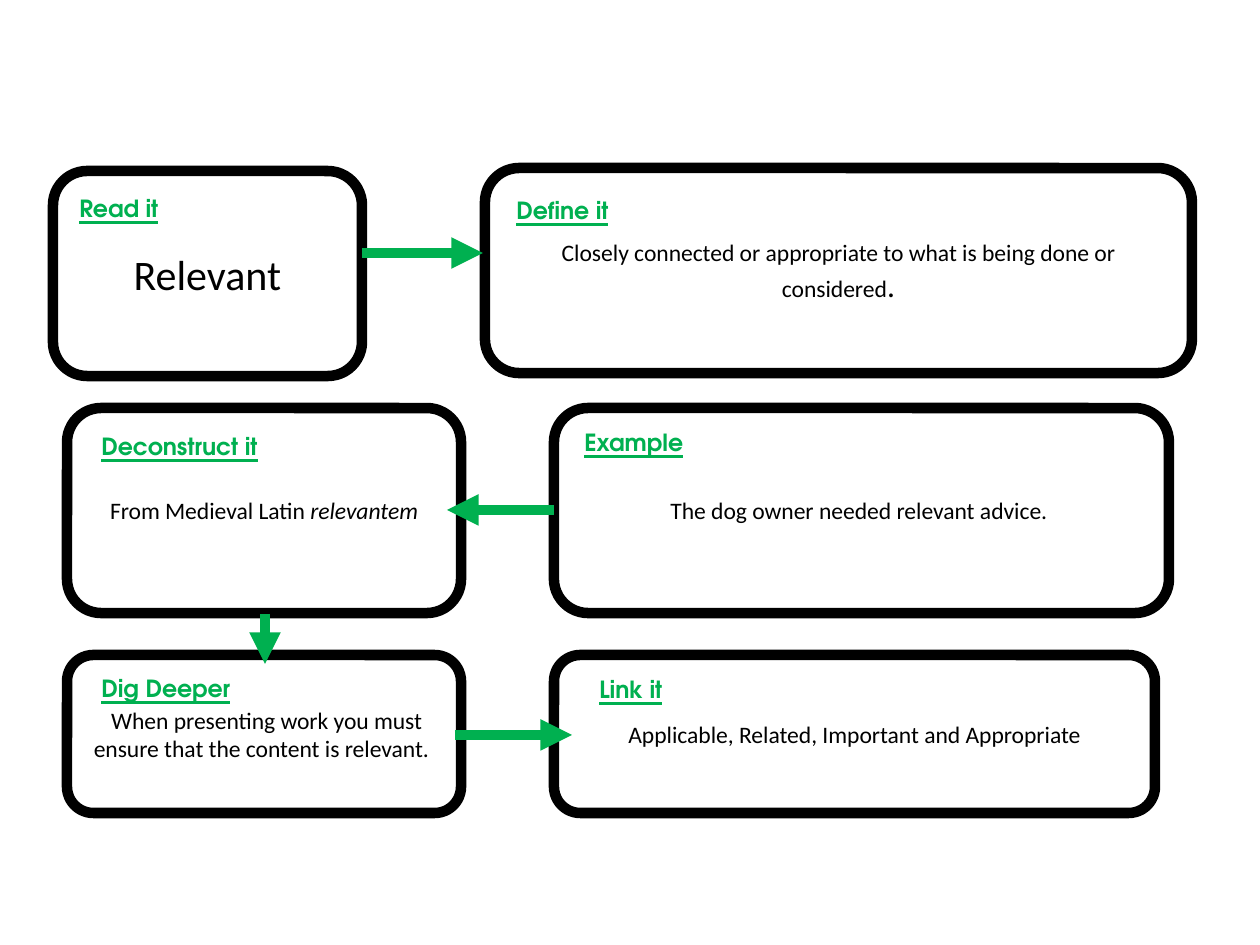
from typing import NamedTuple

from lxml import etree
from pptx import Presentation, util as u
from pptx.dml.color import RGBColor
from pptx.enum import shapes, text
from pptx.oxml import ns

PX = 914400 / 126  # EMU in one px
BLACK = RGBColor(0, 0, 0)
WHITE = RGBColor(255, 255, 255)
GREEN = RGBColor(0x00, 0xB0, 0x50)
BODY, HEAD = "Calibri", "TeX Gyre Adventor"
SIZE, STROKE = 13.5, 6


class Rect(NamedTuple):
    x: int
    y: int
    w: int
    h: int


class Run(NamedTuple):
    words: str
    size: float = SIZE
    slant: bool = False


class Card(NamedTuple):
    title: str
    label: Rect
    box: Rect
    runs: list[Run]


class Arrow(NamedTuple):
    x1: int
    y1: int
    x2: int
    y2: int


CARDS = [
    Card("Read it", Rect(67, 188, 126, 42), Rect(53, 171, 309, 205),
         [Run("Relevant", 24)]),
    Card("Define it", Rect(504, 190, 126, 42), Rect(485, 168, 707, 205),
         [Run("Closely connected or appropriate to what is being done or considered"),
          Run(".", 18)]),
    Card("Deconstruct it", Rect(89, 426, 224, 42), Rect(67, 408, 394, 205),
         [Run("From Medieval Latin "), Run("relevantem", slant=True)]),
    Card("Example", Rect(572, 422, 126, 42), Rect(554, 408, 615, 205),
         [Run("The dog owner needed relevant advice. ")]),
    Card("Dig Deeper", Rect(89, 668, 158, 42), Rect(67, 655, 394, 158),
         [Run(" When presenting work you must ensure that the content is relevant. ")]),
    Card("Link it", Rect(587, 669, 126, 42), Rect(554, 655, 601, 158),
         [Run("Applicable, Related, Important and Appropriate")]),
]

ARROWS = [
    Arrow(554, 510, 447, 510),
    Arrow(362, 253, 483, 253),
    Arrow(455, 735, 572, 735),
    Arrow(265, 614, 265, 664),
]


def emu(*vals: int) -> list[u.Emu]:
    return [u.Emu(round(v * PX)) for v in vals]


def write(para, words: str, *, size: float = SIZE, font: str = BODY,
          color: RGBColor = BLACK, bold: bool = False, slant: bool = False,
          under: bool = False) -> None:
    run = para.add_run()
    run.text = words
    face = run.font
    face.size, face.name, face.color.rgb = u.Pt(size), font, color
    face.bold, face.italic, face.underline = bold, slant, under


def draw_box(slide, card: Card) -> None:
    box = slide.shapes.add_shape(shapes.MSO_SHAPE.ROUNDED_RECTANGLE, *emu(*card.box))
    box.shadow.inherit = False
    box.fill.solid()
    box.fill.fore_color.rgb = WHITE
    box.line.color.rgb = BLACK
    box.line.width = u.Pt(STROKE)
    frame = box.text_frame
    frame.word_wrap = True
    frame.vertical_anchor = text.MSO_ANCHOR.MIDDLE
    para = frame.paragraphs[0]
    para.alignment = text.PP_ALIGN.CENTER
    for run in card.runs:
        write(para, run.words, size=run.size, slant=run.slant)


def draw_arrow(slide, arrow: Arrow) -> None:
    link = slide.shapes.add_connector(shapes.MSO_CONNECTOR.STRAIGHT, *emu(*arrow))
    link.line.color.rgb = GREEN
    link.line.width = u.Pt(STROKE)
    tip = etree.SubElement(link.line._get_or_add_ln(), ns.qn("a:tailEnd"))
    tip.set("type", "triangle")
    etree.SubElement(link._element.spPr, ns.qn("a:effectLst"))


def draw_label(slide, card: Card) -> None:
    frame = slide.shapes.add_textbox(*emu(*card.label)).text_frame
    frame.word_wrap = True
    frame.auto_size = text.MSO_AUTO_SIZE.SHAPE_TO_FIT_TEXT
    write(frame.paragraphs[0], card.title, font=HEAD, color=GREEN,
          bold=True, under=True)


def main() -> None:
    deck = Presentation()
    deck.slide_width, deck.slide_height = emu(1260, 945)
    slide = deck.slides.add_slide(deck.slide_layouts[6])

    # Boxes with their text
    for card in CARDS:
        draw_box(slide, card)

    # Arrows between the boxes
    for arrow in ARROWS:
        draw_arrow(slide, arrow)

    # Headings on top
    for card in CARDS:
        draw_label(slide, card)

    deck.save("out.pptx")


if __name__ == "__main__":
    main()
